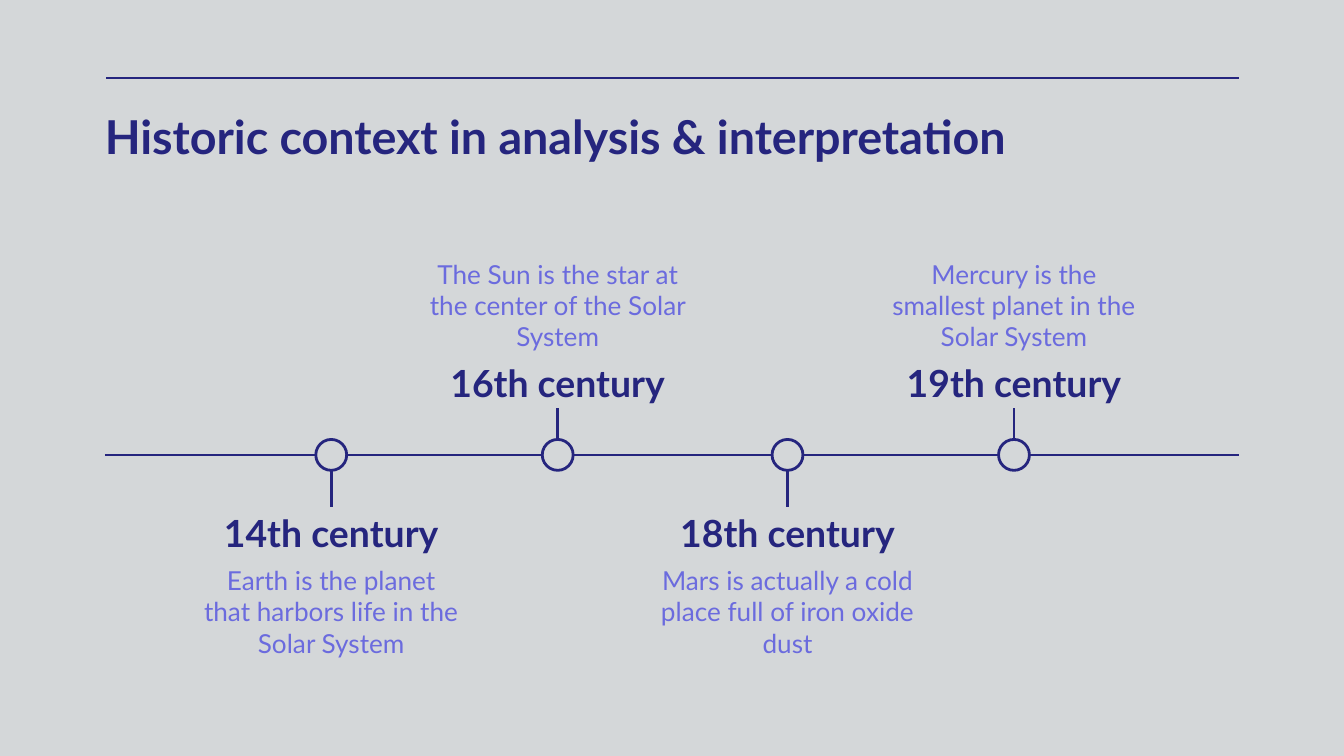
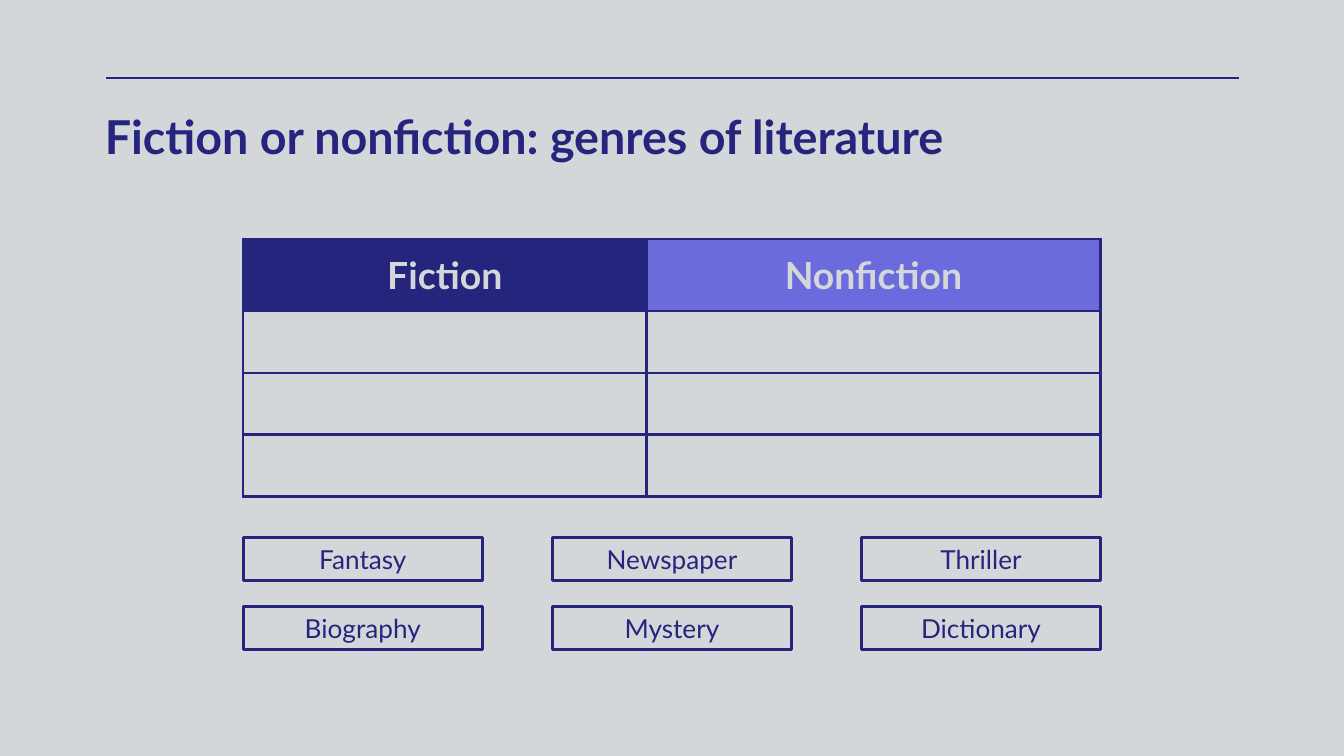
"""Build two literature slides: a century timeline and a genre sorting table."""
from dataclasses import dataclass

from lxml.etree import SubElement
from pptx import Presentation
from pptx.dml.color import RGBColor
from pptx.enum.shapes import MSO_CONNECTOR as Connector, MSO_SHAPE as Preset
from pptx.enum.text import MSO_ANCHOR as Anchor, PP_ALIGN as Align
from pptx.oxml.ns import qn
from pptx.shapes.autoshape import Shape
from pptx.shapes.connector import Connector as Line
from pptx.slide import Slide
from pptx.table import _Cell as Cell
from pptx.text.text import TextFrame
from pptx.util import Inches, Length, Pt

WIDTH, HEIGHT = Inches(10), Inches(5.625)
PAPER = RGBColor(0xD4, 0xD7, 0xD9)
NAVY = RGBColor(0x25, 0x25, 0x7E)
VIOLET = RGBColor(0x6B, 0x6B, 0xDE)
FONT = "Lato"
STROKE = Pt(1.5)
PAD = Inches(0.1)
LEFT, RIGHT = 7.8, 92.2
TITLE_SIZE, HEADING_SIZE, BODY_SIZE = 25, 20, 14


@dataclass(frozen=True)
class Area:
    """A rectangle in percent of the slide's width and height."""
    left: float
    top: float
    width: float
    height: float

    def lengths(self) -> tuple[Length, Length, Length, Length]:
        """Return left, top, width and height as lengths."""
        return across(self.left), down(self.top), across(self.width), down(self.height)


@dataclass(frozen=True)
class Milestone:
    """A dated point of the timeline, placed by its centre."""
    center: float
    century: str
    note: str


@dataclass(frozen=True)
class Side:
    """Where a milestone's texts stand, and the label side its stem meets."""
    label_top: float
    note_top: float
    joint: int
    stem_direction: int


ABOVE = Side(47.11, 33.78, 2, -1)
BELOW = Side(67.02, 74.31, 0, 1)
AXIS, DOT = 60.18, 2.3
DOT_ROWS = DOT * WIDTH / HEIGHT
TEXT_WIDTH, LABEL_HEIGHT, NOTE_HEIGHT = 21.4, 6.93, 13.16
MILESTONES = (
    Milestone(24.65, "14th century", "Earth is the planet that harbors life in the Solar System"),
    Milestone(41.5, "16th century", "The Sun is the star at the center of the Solar System"),
    Milestone(58.6, "18th century", "Mars is actually a cold place full of iron oxide dust"),
    Milestone(75.45, "19th century", "Mercury is the smallest planet in the Solar System"),
)

TABLE = Area(18.1, 31.64, 63.8, 32.54)
HEADERS = (("Fiction", NAVY, 30), ("Nonfiction", VIOLET, 33.8))
ROW_HEIGHTS = (8, 8.18, 8.18, 8.18)
FIRST_GENRE = Area(18.1, 71.11, 17.8, 5.69)
GENRE_STEP, GENRE_DROP = 23, 9.07
GENRES = (
    ("Fantasy", "Newspaper", "Thriller"),
    ("Biography", "Mystery", "Dictionary"),
)


def across(share: float) -> Length:
    """Turn a percentage of the slide's width into a length."""
    return Length(round(WIDTH * share / 100))


def down(share: float) -> Length:
    """Turn a percentage of the slide's height into a length."""
    return Length(round(HEIGHT * share / 100))


def write(frame: TextFrame, text: str, *, size: float, color: RGBColor, bold: bool = False,
          align: Align = Align.CENTER, anchor: Anchor = Anchor.MIDDLE,
          pad_x: Length = PAD, pad_y: Length = PAD) -> None:
    """Put one formatted paragraph into a text frame."""
    frame.word_wrap = True
    frame.vertical_anchor = anchor
    frame.margin_left = frame.margin_right = pad_x
    frame.margin_top = frame.margin_bottom = pad_y
    para = frame.paragraphs[0]
    para.alignment = align
    span = para.add_run()
    span.text = text
    span.font.name = FONT
    span.font.size = Pt(size)
    span.font.bold = bold
    span.font.color.rgb = color


def add_text(page: Slide, area: Area, text: str, **style) -> Shape:
    """Add a text box."""
    box = page.shapes.add_textbox(*area.lengths())
    write(box.text_frame, text, **style)
    return box


def add_line(page: Slide, start: tuple[float, float], end: tuple[float, float]) -> Line:
    """Add a straight line without a shadow."""
    line = page.shapes.add_connector(Connector.STRAIGHT, across(start[0]), down(start[1]),
                                     across(end[0]), down(end[1]))
    line.line.color.rgb = NAVY
    line.line.width = STROKE
    SubElement(line._element.spPr, qn("a:effectLst"))
    return line


def add_outlined(page: Slide, preset: Preset, area: Area) -> Shape:
    """Add a navy outlined shape without a fill or shadow."""
    shape = page.shapes.add_shape(preset, *area.lengths())
    shape.shadow.inherit = False
    shape.fill.background()
    shape.line.color.rgb = NAVY
    shape.line.width = STROKE
    return shape


def add_page(deck: Presentation, title: str) -> Slide:
    """Add a slide with the shared background, rule and title."""
    page = deck.slides.add_slide(deck.slide_layouts[6])
    page.background.fill.solid()
    page.background.fill.fore_color.rgb = PAPER
    add_line(page, (LEFT + 0.1, 10.31), (RIGHT, 10.31))
    add_text(page, Area(LEFT, 14.22, RIGHT - LEFT, 8), title, size=TITLE_SIZE, color=NAVY,
             bold=True, align=Align.LEFT, anchor=Anchor.TOP, pad_x=0, pad_y=0)
    return page


def add_milestone(page: Slide, milestone: Milestone, side: Side) -> None:
    """Add a dot on the axis with its stem, label and note."""
    center, left = milestone.center, milestone.center - TEXT_WIDTH / 2
    dot = add_outlined(page, Preset.OVAL,
                       Area(center - DOT / 2, AXIS - DOT_ROWS / 2, DOT, DOT_ROWS))
    dot.fill.solid()
    dot.fill.fore_color.rgb = PAPER
    label = add_text(page, Area(left, side.label_top, TEXT_WIDTH, LABEL_HEIGHT),
                     milestone.century, size=HEADING_SIZE, color=NAVY, bold=True)
    add_text(page, Area(left, side.note_top, TEXT_WIDTH, NOTE_HEIGHT),
             milestone.note, size=BODY_SIZE, color=VIOLET)
    edge = (center, AXIS + side.stem_direction * DOT_ROWS / 2)
    add_line(page, edge, edge).end_connect(label, side.joint)


def add_borders(cell: Cell) -> None:
    """Draw navy lines on all four sides of a table cell."""
    properties = cell._tc.get_or_add_tcPr()
    for side in ("a:lnL", "a:lnR", "a:lnT", "a:lnB"):
        border = SubElement(properties, qn(side), w=str(STROKE))
        fill = SubElement(border, qn("a:solidFill"))
        SubElement(fill, qn("a:srgbClr"), val=str(NAVY))


def add_genre_table(page: Slide) -> None:
    """Add the table with two headed columns and empty rows."""
    table = page.shapes.add_table(len(ROW_HEIGHTS), len(HEADERS), *TABLE.lengths()).table
    table.first_row = table.horz_banding = False
    for row, height in zip(table.rows, ROW_HEIGHTS):
        row.height = down(height)
    for cell in table.iter_cells():
        add_borders(cell)
        cell.fill.background()
    for index, (text, color, width) in enumerate(HEADERS):
        table.columns[index].width = across(width)
        cell = table.cell(0, index)
        cell.fill.solid()
        cell.fill.fore_color.rgb = color
        cell.vertical_anchor = Anchor.MIDDLE
        cell.margin_left = cell.margin_right = cell.margin_top = cell.margin_bottom = PAD
        para = cell.text_frame.paragraphs[0]
        para.alignment = Align.CENTER
        write_header(para.add_run(), text)


def write_header(span, text: str) -> None:
    """Fill a table header run."""
    span.text = text
    span.font.name = FONT
    span.font.size = Pt(HEADING_SIZE)
    span.font.bold = True
    span.font.color.rgb = PAPER


def build_timeline(deck: Presentation) -> None:
    """Build the timeline, with milestones alternately below and above."""
    page = add_page(deck, "Historic context in analysis & interpretation")
    add_line(page, (LEFT, AXIS), (RIGHT, AXIS))
    for index, milestone in enumerate(MILESTONES):
        add_milestone(page, milestone, ABOVE if index % 2 else BELOW)


def build_genres(deck: Presentation) -> None:
    """Build the table and the grid of genres to sort into it."""
    page = add_page(deck, "Fiction or nonfiction: genres of literature")
    add_genre_table(page)
    for row, genres in enumerate(GENRES):
        for column, genre in enumerate(genres):
            area = Area(FIRST_GENRE.left + column * GENRE_STEP, FIRST_GENRE.top + row * GENRE_DROP,
                        FIRST_GENRE.width, FIRST_GENRE.height)
            box = add_outlined(page, Preset.RECTANGLE, area)
            write(box.text_frame, genre, size=BODY_SIZE, color=NAVY, pad_y=0)


def main() -> None:
    """Create and save the deck."""
    deck = Presentation()
    deck.slide_width, deck.slide_height = WIDTH, HEIGHT
    build_timeline(deck)
    build_genres(deck)
    deck.save("out.pptx")


if __name__ == "__main__":
    main()
